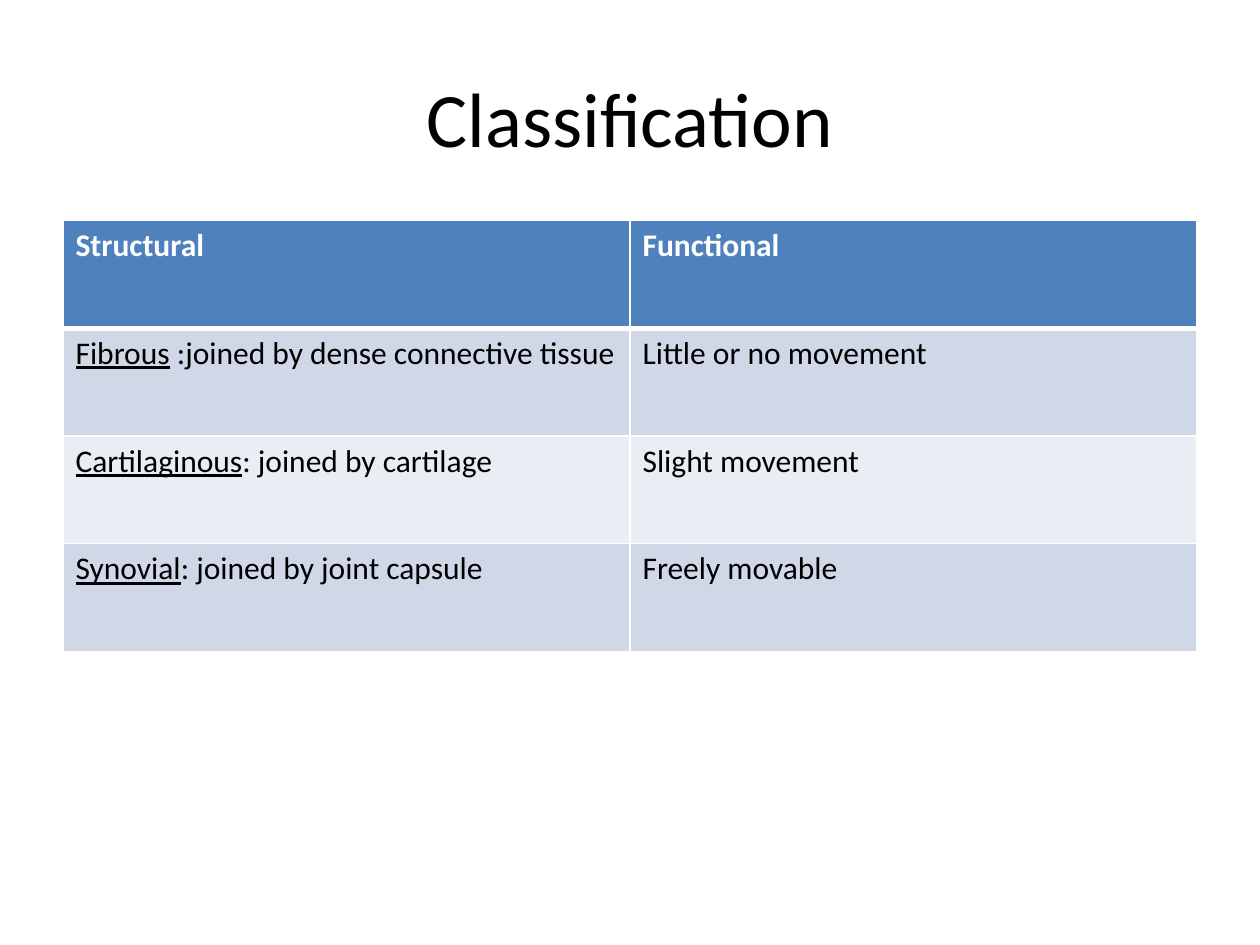
from lxml.etree import SubElement
from pptx import Presentation
from pptx.dml.color import RGBColor
from pptx.enum.text import MSO_ANCHOR, PP_ALIGN
from pptx.oxml.ns import qn
from pptx.util import Inches, Pt

BLACK = RGBColor(0x00, 0x00, 0x00)
WHITE = RGBColor(0xFF, 0xFF, 0xFF)
HEADER_BLUE = RGBColor(0x4F, 0x81, 0xBD)
BAND_FILLS = [RGBColor(0xE9, 0xED, 0xF4), RGBColor(0xD0, 0xD8, 0xE8)]

TITLE_FORMAT = {"name": "Calibri", "size": Pt(44)}
HEADER_FORMAT = {"name": "Calibri", "size": Pt(18), "bold": True}
BODY_FORMAT = {"name": "Calibri", "size": Pt(18), "bold": False}

# Each cell is a pair: underlined term, then plain text
ROWS = [
    [("", "Structural"), ("", "Functional")],
    [("Fibrous", " :joined by dense connective tissue"), ("", "Little or no movement")],
    [("Cartilaginous", ": joined by cartilage"), ("", "Slight movement")],
    [("Synovial", ": joined by joint capsule"), ("", "Freely movable")],
]


def add_span(para, text, color, formats):
    span = para.add_run()
    span.text = text
    for name, value in formats.items():
        setattr(span.font, name, value)
    span.font.color.rgb = color


def add_title(page, text):
    title = page.shapes.title
    title.left, title.top = Inches(0.5), Inches(0.3)
    title.width, title.height = Inches(9), Inches(1.25)
    title.text_frame.vertical_anchor = MSO_ANCHOR.MIDDLE
    para = title.text_frame.paragraphs[0]
    para.alignment = PP_ALIGN.CENTER
    add_span(para, text, BLACK, TITLE_FORMAT)


def set_borders(cell, widths):
    properties = cell._tc.get_or_add_tcPr()
    for side, width in widths.items():
        line = SubElement(properties, qn(f"a:ln{side}"), w=str(Pt(width)))
        fill = SubElement(line, qn("a:solidFill"))
        SubElement(fill, qn("a:srgbClr"), val=str(WHITE))


def fill_cell(cell, parts, row):
    is_header = row == 0
    # Thick rule between the header and the first body row
    set_borders(cell, {"L": 1, "R": 1, "T": 3 if row == 1 else 1, "B": 3 if is_header else 1})
    cell.fill.solid()
    cell.fill.fore_color.rgb = HEADER_BLUE if is_header else BAND_FILLS[row % 2]

    color = WHITE if is_header else BLACK
    formats = HEADER_FORMAT if is_header else BODY_FORMAT
    para = cell.text_frame.paragraphs[0]
    term, text = parts
    if term:
        add_span(para, term, color, {**formats, "underline": True})
    add_span(para, text, color, formats)


def add_classification_table(page, rows):
    frame = page.shapes.add_table(len(rows), len(rows[0]), Inches(0.5), Inches(1.75),
                                  Inches(9), Inches(3.42))
    for row, cells in enumerate(rows):
        for column, parts in enumerate(cells):
            fill_cell(frame.table.cell(row, column), parts, row)


def main():
    deck = Presentation()
    deck.slide_width, deck.slide_height = Inches(10), Inches(7.5)
    page = deck.slides.add_slide(deck.slide_layouts[5])  # Title Only
    add_title(page, "Classification")
    add_classification_table(page, ROWS)
    deck.save("out.pptx")


if __name__ == "__main__":
    main()
